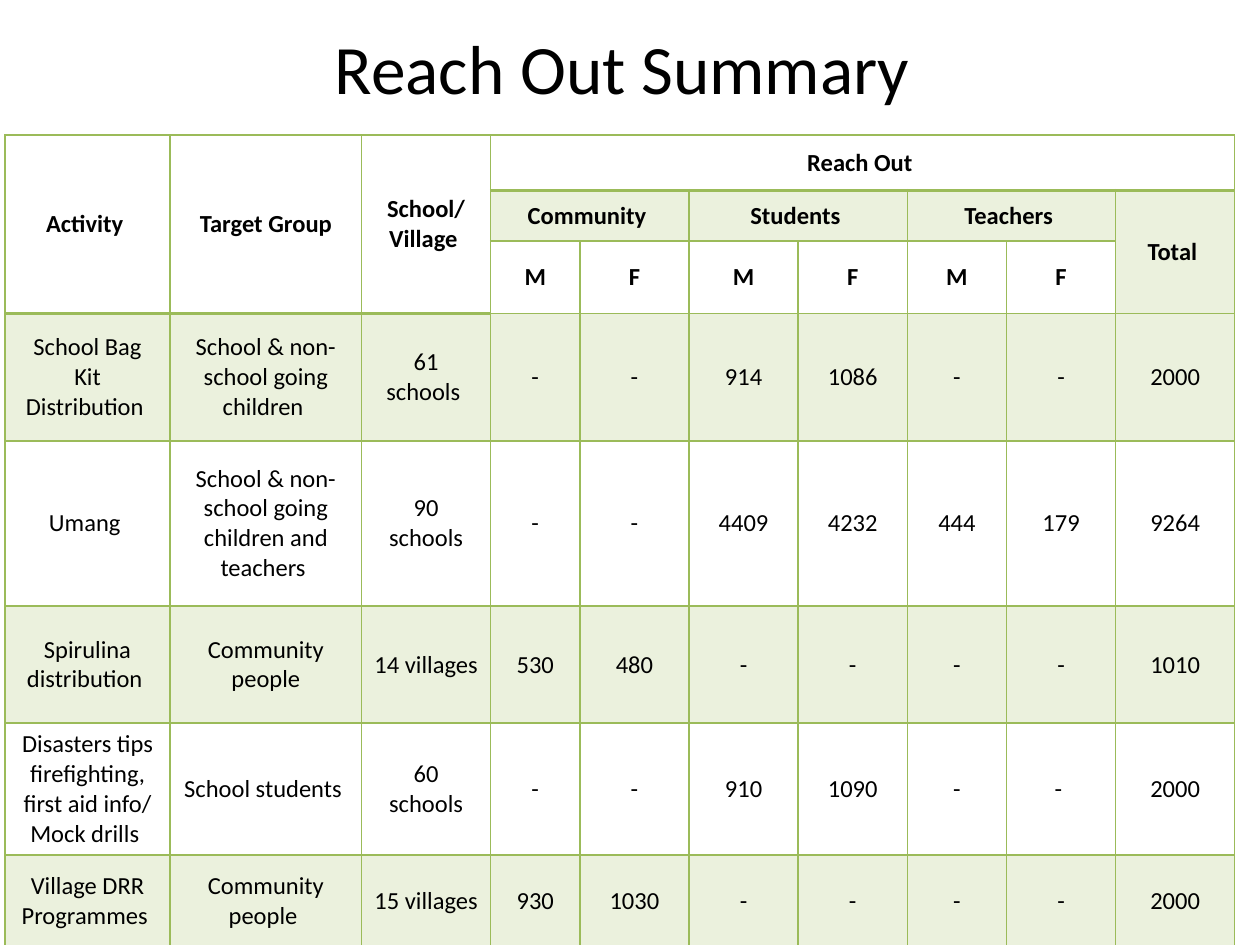
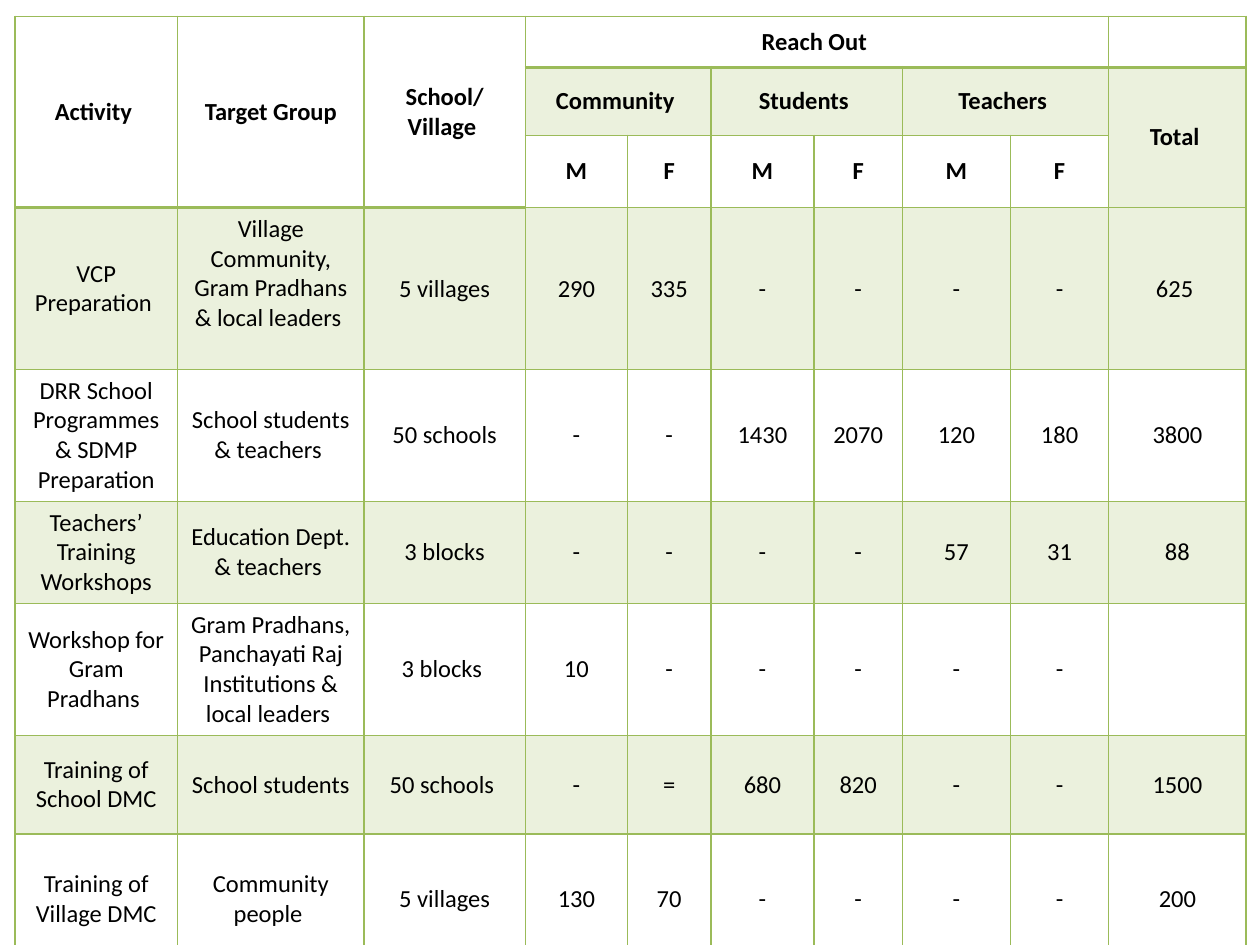
from dataclasses import dataclass
from typing import NamedTuple

from lxml.etree import SubElement
from pptx import Presentation
from pptx.dml.color import RGBColor
from pptx.enum.text import MSO_ANCHOR, MSO_AUTO_SIZE, PP_ALIGN
from pptx.oxml.ns import qn
from pptx.slide import Slide
from pptx.table import Table, _Cell
from pptx.text.text import TextFrame
from pptx.util import Cm, Pt


@dataclass(frozen=True)
class Theme:
    font: str = "Calibri"
    ink: RGBColor = RGBColor(0x00, 0x00, 0x00)
    green: RGBColor = RGBColor(0x9B, 0xBB, 0x59)
    band_opacity: int = 20
    title_size: float = 39.6
    table_size: float = 14
    thin_rule: float = 1
    heavy_rule: float = 2


class Outreach(NamedTuple):
    activity: str
    target_group: str
    place: str
    counts: tuple[str, ...]
    total: str
    group_gap: float = 0.13


@dataclass(frozen=True)
class Summary:
    left: float
    top: float
    widths: tuple[float, ...]
    heights: tuple[float, ...]
    reach_out_end: int
    activities: tuple[Outreach, ...]


THEME = Theme()
LABELS = ("Activity ", "Target Group", "School/\nVillage ")
AUDIENCES = ("Community ", "Students ", "Teachers ")
GENDERS = ("M", "F")
HEADER_ROWS = 3
FIRST_COUNT = len(LABELS)
TOTAL_COLUMN = FIRST_COUNT + len(AUDIENCES) * len(GENDERS)

DIRECT_REACH = Summary(
    left=0.1,
    top=2.72,
    widths=(3.33, 3.86, 2.6, 1.8, 2.2, 2.2, 2.2, 2.0, 2.2, 2.4),
    heights=(1.12, 1.02, 1.02, 2.57, 3.33, 2.36, 2.36, 1.85),
    reach_out_end=TOTAL_COLUMN,
    activities=(
        Outreach("School Bag Kit Distribution ", "School & non-school going children ",
                 "61 schools ", ("-", "-", "914", "1086", "-", "-"), "2000"),
        Outreach("Umang ", "School & non-school going children and teachers ",
                 "90 schools", ("-", "-", "4409", "4232", "444", "179"), "9264"),
        Outreach("Spirulina distribution ", "Community people",
                 "14 villages", ("530", "480", "-", "-", "-", "-"), "1010"),
        Outreach("Disasters tips firefighting, first aid info/ Mock drills ",
                 "School students ", "60 schools",
                 ("-", "-", "910", "1090", "-", "- "), "2000"),
        Outreach("Village DRR Programmes ", "Community people ",
                 "15 villages ", ("930", "1030", "-", "-", "-", "-"), "2000"),
    ),
)

TRAINING_REACH = Summary(
    left=0.3,
    top=0.33,
    widths=(3.28, 3.76, 3.25, 2.06, 1.68, 2.08, 1.78, 2.18, 1.98, 2.77),
    heights=(0.97, 1.37, 0.97, 3.15, 2.57, 1.98, 2.62, 1.98, 2.62),
    reach_out_end=TOTAL_COLUMN - 1,
    activities=(
        Outreach("VCP Preparation ", "Village Community, Gram Pradhans & local leaders ",
                 "5 villages", ("290", "335", "-", "-", "-", "-"), "625 ", group_gap=0.73),
        Outreach("DRR School Programmes & SDMP Preparation", "School students & teachers ",
                 "50 schools", ("-", "-", "1430", "2070", "120", "180"), "3800"),
        Outreach("Teachers’ Training Workshops", "Education Dept. & teachers ",
                 "3 blocks", ("-", "-", "-", "-", "57", "31"), "88"),
        Outreach("Workshop for Gram Pradhans ",
                 "Gram Pradhans, Panchayati Raj Institutions & local leaders ",
                 "3 blocks ", ("10", "-", "-", "-", "-", "-"), ""),
        Outreach("Training of School DMC", "School students ",
                 "50 schools ", ("-", "=", "680", "820", "-", "-"), "1500"),
        Outreach("Training of Village DMC", "Community people ",
                 "5 villages", ("130", "70", "-", "-", "-", "-"), "200"),
    ),
)


def write(frame: TextFrame, wording: str, size: float, bold: bool = False) -> None:
    frame.text = wording
    for paragraph in frame.paragraphs:
        paragraph.alignment = PP_ALIGN.CENTER
        for run in paragraph.runs:
            run.font.name = THEME.font
            run.font.size = Pt(size)
            run.font.bold = bold
            run.font.color.rgb = THEME.ink


def rule_cell(cell: _Cell, row: int, column: int) -> None:
    is_label = column < FIRST_COUNT
    heavy_top = row == (HEADER_ROWS if is_label else 1)
    heavy_bottom = row == 0 or (is_label and row == HEADER_ROWS - 1)
    edges = {"a:lnL": False, "a:lnR": False, "a:lnT": heavy_top, "a:lnB": heavy_bottom}
    properties = cell._tc.get_or_add_tcPr()
    for edge, heavy in edges.items():
        weight = THEME.heavy_rule if heavy else THEME.thin_rule
        line = SubElement(properties, qn(edge), w=str(Pt(weight)))
        SubElement(SubElement(line, qn("a:solidFill")), qn("a:srgbClr"), val=str(THEME.green))


def shade_cell(cell: _Cell, banded: bool) -> None:
    if not banded:
        cell.fill.background()
        return
    cell.fill.solid()
    cell.fill.fore_color.rgb = THEME.green
    tint = cell._tc.tcPr.find(qn("a:solidFill")).find(qn("a:srgbClr"))
    SubElement(tint, qn("a:alpha"), val=str(THEME.band_opacity * 1000))


def write_cell(table: Table, row: int, column: int, wording: str) -> None:
    write(table.cell(row, column).text_frame, wording, THEME.table_size, row < HEADER_ROWS)


def add_headings(table: Table, reach_out_end: int) -> None:
    last_header = HEADER_ROWS - 1
    for column, label in enumerate(LABELS):
        table.cell(0, column).merge(table.cell(last_header, column))
        write_cell(table, 0, column, label)
    table.cell(0, FIRST_COUNT).merge(table.cell(0, reach_out_end))
    write_cell(table, 0, FIRST_COUNT, "Reach Out ")
    for group, audience in enumerate(AUDIENCES):
        start = FIRST_COUNT + group * len(GENDERS)
        table.cell(1, start).merge(table.cell(1, start + len(GENDERS) - 1))
        write_cell(table, 1, start, audience)
        for offset, gender in enumerate(GENDERS):
            write_cell(table, last_header, start + offset, gender)
    table.cell(1, TOTAL_COLUMN).merge(table.cell(last_header, TOTAL_COLUMN))
    write_cell(table, 1, TOTAL_COLUMN, "Total ")


def add_summary(slide: Slide, summary: Summary) -> None:
    table = slide.shapes.add_table(
        len(summary.heights), len(summary.widths), Cm(summary.left), Cm(summary.top),
        Cm(sum(summary.widths)), Cm(sum(summary.heights))).table
    table.first_row = table.horz_banding = False
    for column, width in enumerate(summary.widths):
        table.columns[column].width = Cm(width)
    for row, height in enumerate(summary.heights):
        table.rows[row].height = Cm(height)
        for column in range(len(summary.widths)):
            cell = table.cell(row, column)
            cell.vertical_anchor = MSO_ANCHOR.MIDDLE
            rule_cell(cell, row, column)
            shade_cell(cell, row % 2 == 1)
    add_headings(table, summary.reach_out_end)
    for cell in (table.cell(0, column) for column in range(FIRST_COUNT)):
        cell.fill.background()
    for row, outreach in enumerate(summary.activities, start=HEADER_ROWS):
        entries = (outreach.activity, outreach.target_group, outreach.place,
                   *outreach.counts, outreach.total)
        for column, entry in enumerate(entries):
            write_cell(table, row, column, entry)
        table.cell(row, 1).margin_bottom = Cm(outreach.group_gap)


def add_title(slide: Slide, wording: str) -> None:
    title = slide.shapes.title
    title.left, title.top, title.width, title.height = Cm(1.27), Cm(0.76), Cm(22.86), Cm(1.17)
    title.text_frame.auto_size = MSO_AUTO_SIZE.NONE
    title.text_frame.vertical_anchor = MSO_ANCHOR.MIDDLE
    write(title.text_frame, wording, THEME.title_size)


def main() -> None:
    deck = Presentation()
    deck.slide_width, deck.slide_height = Cm(25.4), Cm(19.05)
    title_only, blank = deck.slide_layouts[5], deck.slide_layouts[6]

    opening = deck.slides.add_slide(title_only)
    add_title(opening, "Reach Out Summary ")
    add_summary(opening, DIRECT_REACH)
    add_summary(deck.slides.add_slide(blank), TRAINING_REACH)
    deck.save("out.pptx")


if __name__ == "__main__":
    main()
